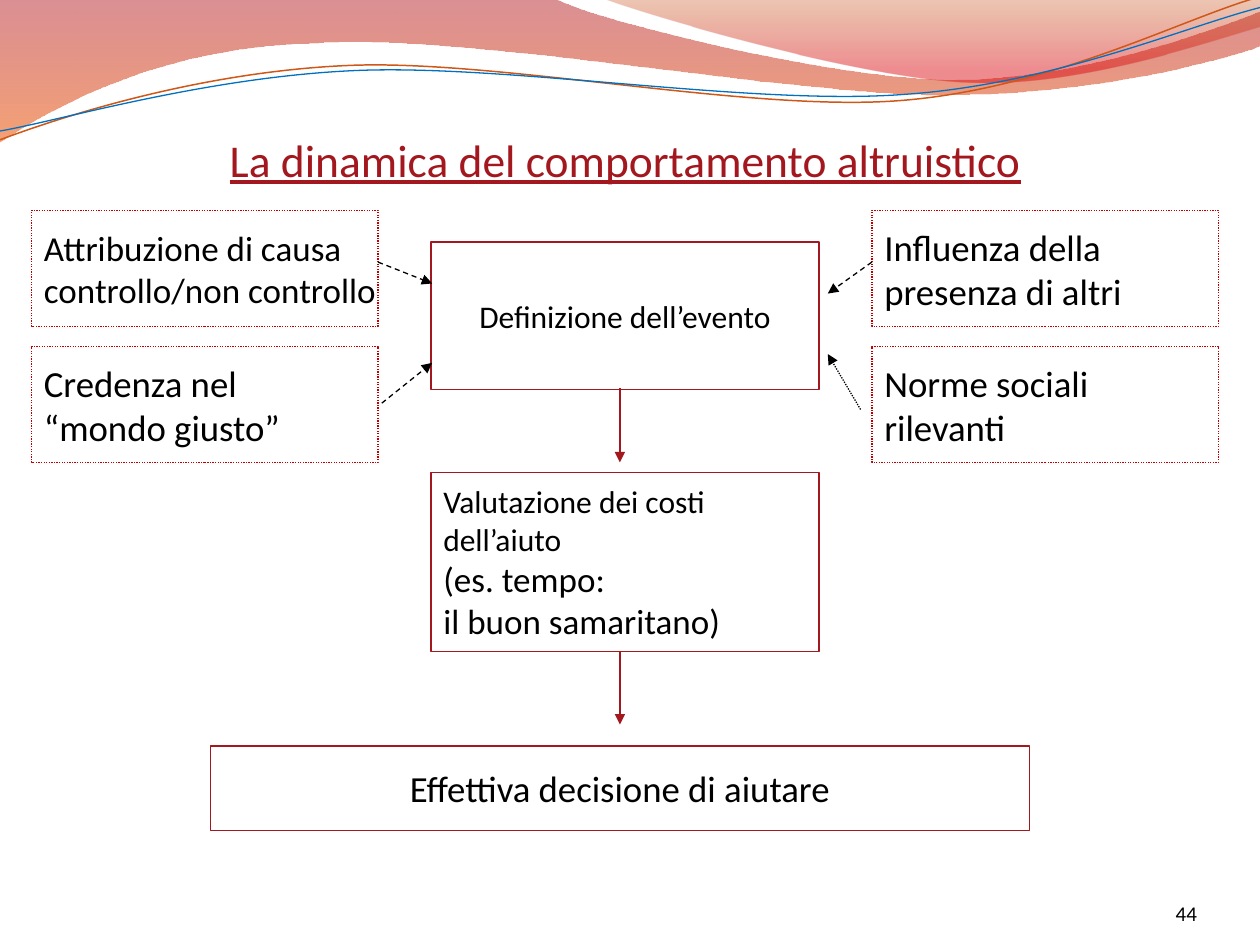
"""Build the slide on the dynamics of altruistic behaviour."""
from dataclasses import dataclass
from typing import Optional

from pptx import Presentation
from pptx import util as u
from pptx.dml.color import RGBColor
from pptx.enum import dml, shapes, text
from pptx.oxml.ns import qn
from pptx.oxml.xmlchemy import OxmlElement

FONT = "Calibri"
BLACK, CRIMSON, RED = "000000", "A3171E", "C00000"
DOTTED, DASHED = dml.MSO_LINE.ROUND_DOT, dml.MSO_LINE.DASH
LEFT, CENTER, RIGHT = text.PP_ALIGN.LEFT, text.PP_ALIGN.CENTER, text.PP_ALIGN.RIGHT
SIDE_SIZE, STEP_WIDTH, STEP_LEFT = (2.75, 0.92), 3.08, 3.42
LEFT_SIDE, RIGHT_SIDE, UPPER, LOWER = 0.25, 6.92, 1.67, 2.75
ARROW_X = 4.92


@dataclass
class Stop:
    position: float
    color: str
    opacity: int


@dataclass
class Wave:
    start: tuple
    segments: list
    stops: tuple = ()
    color: str = BLACK
    width: float = 0.75


@dataclass
class Box:
    left: float
    top: float
    width: float
    height: float
    lines: list
    color: str = CRIMSON
    dash: Optional[dml.MSO_LINE] = None
    align: text.PP_ALIGN = LEFT


@dataclass
class Arrow:
    start: tuple
    end: tuple
    color: str = BLACK
    dash: Optional[dml.MSO_LINE] = None


WAVES = [
    Wave((0, 0), [
        [(4.4, -0.01)],
        [(4.76, 0.17), (6.64, 0.63), (7.58, 0.63)],
        [(8.53, 0.63), (9.58, 0.26), (10, 0.09)],
        [(10.01, 0.36)],
        [(9.83, 0.44), (8.7, 0.76), (7.46, 0.75)],
        [(6.22, 0.75), (3.82, 0.28), (2.57, 0.34)],
        [(1.29, 0.36), (0.46, 0.83), (-0.01, 1.13)],
    ], (Stop(0, "AF0911", 45), Stop(1, "EE5300", 55))),
    Wave((4.79, -0.01), [
        [(5.09, 0.11), (6.82, 0.62), (7.69, 0.65)],
        [(8.56, 0.69), (9.61, 0.32), (10, 0.21)],
        [(10, 0)],
    ], (Stop(0, "C24400", 30), Stop(0.8, "DC000B", 45))),
    Wave((0, 1.11), [
        [(0.48, 0.93), (1.58, 0.57), (2.77, 0.52)],
        [(3.95, 0.47), (5.93, 0.89), (7.13, 0.8)],
        [(8.33, 0.71), (9.38, 0.15), (9.98, -0.02)],
    ], color="CF5818", width=0.85),
    Wave((0, 1.04), [
        [(0.47, 0.96), (1.64, 0.61), (2.83, 0.56)],
        [(4.03, 0.51), (5.97, 0.84), (7.17, 0.75)],
        [(8.36, 0.67), (9.41, 0.21), (10, 0.06)],
    ], color="0070C0"),
]

BOXES = [
    Box(LEFT_SIDE, UPPER, *SIDE_SIZE,
        [("Attribuzione di causa", 20), ("controllo/non controllo", 20)], RED, DOTTED),
    Box(LEFT_SIDE, LOWER, *SIDE_SIZE,
        [("Credenza nel", 21), ("“mondo giusto”", 21)], RED, DOTTED),
    Box(STEP_LEFT, 1.92, STEP_WIDTH, 1.17, [("Definizione dell’evento", 18)], align=CENTER),
    Box(RIGHT_SIDE, UPPER, *SIDE_SIZE,
        [("Influenza della", 21), ("presenza di altri", 21)], RED, DOTTED),
    Box(RIGHT_SIDE, LOWER, *SIDE_SIZE,
        [("Norme sociali", 21), ("rilevanti", 21)], RED, DOTTED),
    Box(STEP_LEFT, 3.75, STEP_WIDTH, 1.42,
        [("Valutazione dei costi", 18), ("dell’aiuto", 18),
         ("(es. tempo:", 20), ("il buon samaritano)", 20)]),
    Box(1.67, 5.92, 6.5, 0.67, [("Effettiva decisione di aiutare", 21)], align=CENTER),
]

ARROWS = [
    Arrow((3, 2.08), (3.43, 2.25), dash=DASHED),
    Arrow((3.03, 3.2), (3.43, 2.88), dash=DASHED),
    Arrow((ARROW_X, 5.17), (ARROW_X, 5.75), CRIMSON),
    Arrow((ARROW_X, 3.08), (ARROW_X, 3.67), CRIMSON),
    Arrow((6.92, 2.08), (6.57, 2.33), dash=DASHED),
    Arrow((6.83, 3.25), (6.57, 2.81), dash=DOTTED),
]


def rgb(color: str) -> RGBColor:
    return RGBColor.from_string(color)


def inches(*lengths: float) -> list:
    return [u.Inches(length) for length in lengths]


def style_line(line, color: str, width: float = 0.75, dash=None) -> None:
    line.color.rgb = rgb(color)
    line.width = u.Pt(width)
    if dash is not None:
        line.dash_style = dash


def write(frame, lines: list, align: text.PP_ALIGN, color: str = BLACK, underline=None) -> None:
    for index, (words, size) in enumerate(lines):
        paragraph = frame.add_paragraph() if index else frame.paragraphs[0]
        paragraph.alignment = align
        run = paragraph.add_run()
        run.text = words
        run.font.name, run.font.size = FONT, u.Pt(size)
        run.font.color.rgb = rgb(color)
        run.font.underline = underline


def draw_wave(slide, wave: Wave) -> None:
    points = [inches(*point) for segment in wave.segments for point in segment]
    builder = slide.shapes.build_freeform(*inches(*wave.start))
    builder.add_line_segments(points, close=bool(wave.stops))
    shape = builder.convert_to_shape()
    shape.shadow.inherit = False
    steps = iter(list(shape._element.iter(qn("a:lnTo"))))
    for segment in wave.segments:
        parts = [next(steps) for _ in segment]
        if len(parts) == 3:
            curve = OxmlElement("a:cubicBezTo")
            parts[0].addprevious(curve)
            for part in parts:
                curve.append(part[0])
                part.getparent().remove(part)
    if not wave.stops:
        shape.fill.background()
        style_line(shape.line, wave.color, wave.width)
        return
    shape.line.fill.background()
    shape.fill.gradient()
    shape.fill.gradient_angle = 270
    for target, stop in zip(shape.fill.gradient_stops, wave.stops):
        target.color.rgb = rgb(stop.color)
        target.position = stop.position
    for tint, stop in zip(shape._element.iter(qn("a:srgbClr")), wave.stops):
        alpha = OxmlElement("a:alpha")
        alpha.set("val", str(stop.opacity * 1000))
        tint.append(alpha)


def draw_box(slide, box: Box) -> None:
    shape = slide.shapes.add_shape(
        shapes.MSO_SHAPE.RECTANGLE, *inches(box.left, box.top, box.width, box.height))
    shape.shadow.inherit = False
    shape.fill.background()
    style_line(shape.line, box.color, dash=box.dash)
    shape.text_frame.word_wrap = False
    shape.text_frame.vertical_anchor = text.MSO_ANCHOR.MIDDLE
    write(shape.text_frame, box.lines, box.align)


def draw_arrow(slide, arrow: Arrow) -> None:
    connector = slide.shapes.add_connector(
        shapes.MSO_CONNECTOR.STRAIGHT, *inches(*arrow.start, *arrow.end))
    style_line(connector.line, arrow.color, dash=arrow.dash)
    head = OxmlElement("a:tailEnd")
    head.set("type", "triangle")
    connector.line._get_or_add_ln().append(head)
    connector._element.spPr.append(OxmlElement("a:effectLst"))


def main() -> None:
    deck = Presentation()
    deck.slide_width, deck.slide_height = inches(10, 7.5)
    slide = deck.slides.add_slide(deck.slide_layouts[6])
    for wave in WAVES:
        draw_wave(slide, wave)

    number = slide.shapes.add_textbox(*inches(8.67, 6.95, 0.83, 0.4)).text_frame
    number.word_wrap = True
    number.vertical_anchor = text.MSO_ANCHOR.BOTTOM
    number.margin_left = number.margin_right = number.margin_top = number.margin_bottom = 0
    write(number, [("44", 12)], RIGHT)

    title = slide.shapes.add_textbox(*inches(0.13, 1, 9.67, 6)).text_frame
    title.word_wrap = True
    write(title, [("La dinamica del comportamento altruistico", 26)], CENTER, CRIMSON, True)

    for box in BOXES:
        draw_box(slide, box)
    for arrow in ARROWS:
        draw_arrow(slide, arrow)
    deck.save("out.pptx")


if __name__ == "__main__":
    main()
